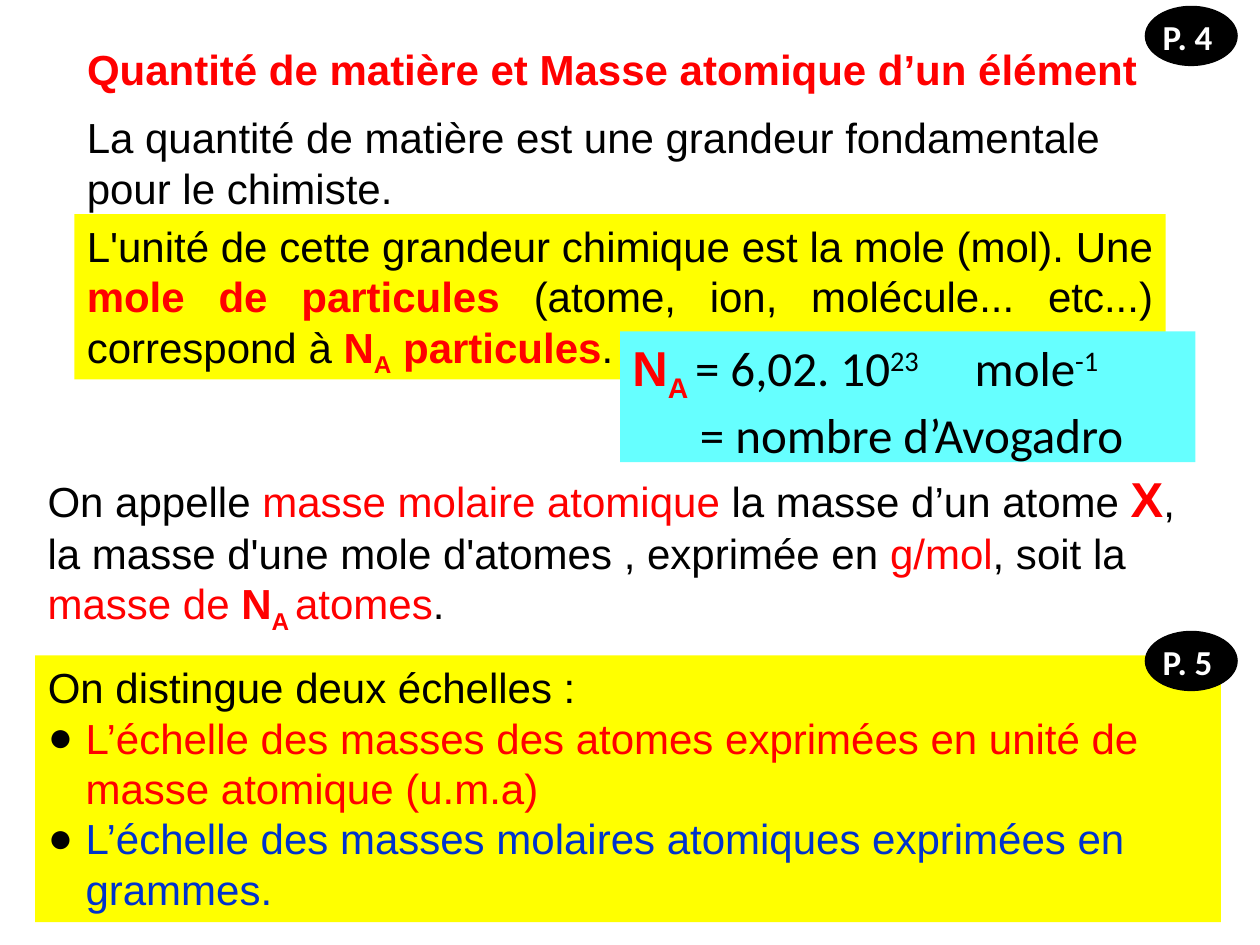
from dataclasses import dataclass

from lxml.etree import SubElement
from pptx import Presentation
from pptx.dml.color import RGBColor as Rgb
from pptx.enum.shapes import MSO_SHAPE as Shape
from pptx.enum.text import MSO_ANCHOR as Anchor, MSO_AUTO_SIZE as AutoSize, PP_ALIGN as Align
from pptx.oxml.ns import qn
from pptx.util import Cm, Pt


@dataclass(frozen=True)
class Theme:
    black: Rgb = Rgb(0, 0, 0)
    white: Rgb = Rgb(255, 255, 255)
    red: Rgb = Rgb(255, 0, 0)
    blue: Rgb = Rgb(0, 0x33, 0xCC)
    yellow: Rgb = Rgb(255, 255, 0)
    cyan: Rgb = Rgb(0x66, 255, 255)
    sans: str = "Arial"
    formula: str = "Calibri"
    badge_size: Pt = Pt(20)
    text_size: Pt = Pt(24)
    large_size: Pt = Pt(28)


THEME = Theme()
SUBSCRIPT, SUPERSCRIPT = -25000, 30000


def add_span(para, text, colour=THEME.black, bold=False, size=THEME.text_size,
             font=THEME.sans, shift=0):
    span = para.add_run()
    span.text = text
    span.font.name = font
    span.font.size = size
    span.font.bold = bold
    span.font.color.rgb = colour
    if shift:
        span.font._element.set("baseline", str(shift))


def place(shape, box):
    shape.left, shape.top, shape.width, shape.height = (Cm(length) for length in box)


def prepare(frame, wrap=True):
    frame.word_wrap = wrap
    frame.auto_size = AutoSize.NONE
    frame.vertical_anchor = Anchor.TOP
    return frame.paragraphs[0]


def add_panel(shapes, box, fill, kind=Shape.RECTANGLE):
    panel = shapes.add_shape(kind, *(Cm(length) for length in box))
    panel.shadow.inherit = False
    panel.fill.solid()
    panel.fill.fore_color.rgb = fill
    panel.line.fill.background()
    return panel


def add_panel_text(page, box, fill):
    frame = add_panel(page.shapes, box, fill).text_frame
    para = prepare(frame)
    para.alignment = Align.LEFT
    return frame, para


def set_indent(para, margin, first=0):
    props = para._p.get_or_add_pPr()
    props.set("marL", str(Cm(margin)))
    props.set("indent", str(Cm(first)))
    return props


def set_bullet(para):
    props = set_indent(para, 0.76, -0.76)
    colour = SubElement(props, qn("a:buClr"))
    SubElement(colour, qn("a:srgbClr"), val=str(THEME.black))
    SubElement(props, qn("a:buFont"), typeface=THEME.sans)
    SubElement(props, qn("a:buChar"), char="●")


def fill_title(page, box):
    title = page.shapes.title
    place(title, box)
    para = prepare(title.text_frame)
    para.alignment = Align.LEFT
    add_span(para, "Quantité de matière et Masse atomique d’un élément", THEME.red, True)


def fill_scales(page, box):
    body = page.placeholders[1]
    place(body, box)
    body.fill.solid()
    body.fill.fore_color.rgb = THEME.yellow
    para = prepare(body.text_frame)
    para.space_before = Pt(0)
    SubElement(set_indent(para, 0), qn("a:buNone"))
    add_span(para, "On distingue deux échelles :")
    scales = (
        ("L’échelle des masses des atomes exprimées en unité de masse atomique (u.m.a)", THEME.red),
        ("L’échelle des masses molaires atomiques exprimées en grammes.", THEME.blue),
    )
    for text, colour in scales:
        para = body.text_frame.add_paragraph()
        para.space_before = Pt(0)
        set_bullet(para)
        add_span(para, text, colour)


def add_intro(page, box):
    intro = page.shapes.add_textbox(*(Cm(length) for length in box))
    para = prepare(intro.text_frame)
    add_span(para, "La quantité de matière est une grandeur fondamentale pour le chimiste.")


def add_molar_mass(page, box):
    frame, para = add_panel_text(page, box, THEME.white)
    add_span(para, "On appelle ")
    add_span(para, "masse molaire atomique ", THEME.red)
    add_span(para, "la masse d’un atome ")
    add_span(para, "X", THEME.red, True, THEME.large_size)
    add_span(para, ", la masse d'une mole d'atomes , exprimée en ")
    add_span(para, "g/mol", THEME.red)
    add_span(para, ", soit la ")
    add_span(para, "masse de ", THEME.red)
    add_span(para, "N", THEME.red, True)
    add_span(para, "A ", THEME.red, True, shift=SUBSCRIPT)
    add_span(para, "atomes", THEME.red)
    add_span(para, ".")


def add_mole_unit(page, box):
    frame, para = add_panel_text(page, box, THEME.yellow)
    para.alignment = Align.JUSTIFY
    add_span(para, "L'unité de cette grandeur chimique est la mole (mol). Une ")
    add_span(para, "mole de particules ", THEME.red, True)
    add_span(para, "(atome, ion, molécule... etc...) correspond à ")
    add_span(para, "N", THEME.red, True)
    add_span(para, "A", THEME.red, True, shift=SUBSCRIPT)
    add_span(para, " particules", THEME.red, True)
    add_span(para, ". ")


def add_avogadro(page, box):
    frame, para = add_panel_text(page, box, THEME.cyan)
    formula = {"size": THEME.large_size, "font": THEME.formula}
    tabs = SubElement(para._p.get_or_add_pPr(), qn("a:tabLst"))
    SubElement(tabs, qn("a:tab"), pos=str(Cm(6.9)), algn="l")
    add_span(para, "N", THEME.red, True, THEME.large_size)
    add_span(para, "A ", THEME.red, True, THEME.large_size, shift=SUBSCRIPT)
    add_span(para, "= 6,02. 10", **formula)
    add_span(para, "23", shift=SUPERSCRIPT, **formula)
    add_span(para, "\tmole", **formula)
    add_span(para, "-1", shift=SUPERSCRIPT, **formula)
    para = frame.add_paragraph()
    para.alignment = Align.LEFT
    set_indent(para, 1.36)
    add_span(para, "= nombre d’Avogadro", **formula)


def add_badge(page, box, text):
    left, top, width, height = box
    badge = page.shapes.add_group_shape()
    oval = add_panel(badge.shapes, box, THEME.black, Shape.OVAL)
    oval.line.color.rgb = THEME.black
    oval.line.width = Pt(0.75)
    label = badge.shapes.add_textbox(Cm(left + 0.1), Cm(top + 0.06), Cm(width - 0.33), Cm(height - 0.08))
    para = prepare(label.text_frame, wrap=False)
    add_span(para, text, THEME.white, True, THEME.badge_size, THEME.formula)


def main():
    deck = Presentation()
    deck.slide_width, deck.slide_height = Cm(25.4), Cm(19.05)
    page = deck.slides.add_slide(deck.slide_layouts[1])
    column, column_width = 1.5, 22
    wide, wide_width = 0.71, 23.9
    fill_title(page, (column, 0.74, column_width, 1.27))
    fill_scales(page, (wide, 13.21, wide_width, 5.38))
    add_intro(page, (column, 2.13, column_width, 2.31))
    add_molar_mass(page, (wide, 9.32, wide_width, 3.5))
    for top, text in ((0.13, "P. 4"), (12.73, "P. 5")):
        add_badge(page, (23.09, top, 1.85, 1.19), text)
    add_mole_unit(page, (column, 4.32, column_width, 3.33))
    add_avogadro(page, (12.5, 6.68, 11.6, 2.64))
    deck.save("out.pptx")


if __name__ == "__main__":
    main()
